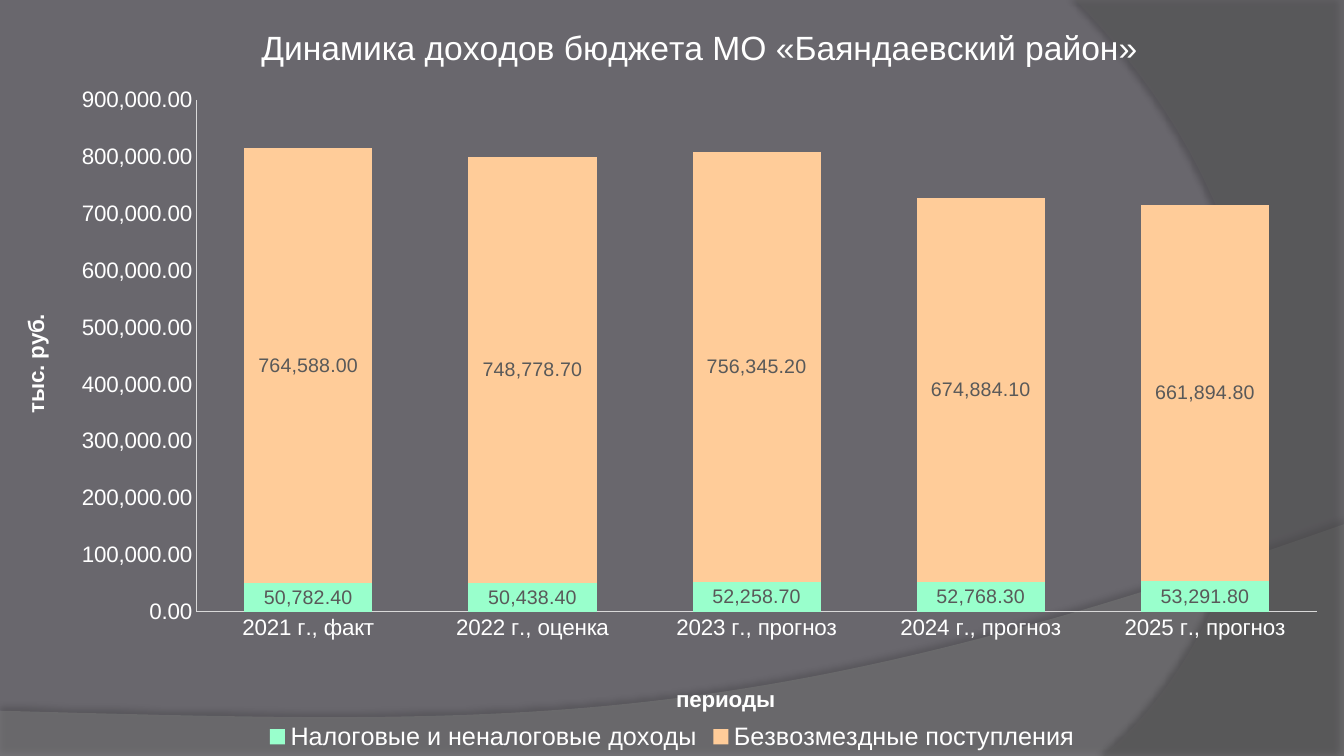
from lxml import etree
from pptx import Presentation
from pptx.chart.data import CategoryChartData
from pptx.dml.color import RGBColor
from pptx.enum.chart import XL_CHART_TYPE, XL_LEGEND_POSITION, XL_TICK_MARK
from pptx.oxml import parse_xml
from pptx.oxml.ns import nsdecls, qn
from pptx.util import Cm, Pt

STACKED = XL_CHART_TYPE.COLUMN_STACKED
BOTTOM = XL_LEGEND_POSITION.BOTTOM
NO_TICK = XL_TICK_MARK.NONE

WIDTH, HEIGHT = 33.87, 19.05
FONT = "Arial"
NUMBER_FORMAT = "#,##0.00"
COLORS = {
    "background": "69676D", "wave": "7F7F7F", "side": "5E5E5E",
    "shadow": "000000", "text": "FFFFFF", "label": "595959",
    "axis": "D9D9D9", "tax": "99FFCC", "grants": "FFCC99",
}
PERIODS = ["2021 г., факт", "2022 г., оценка", "2023 г., прогноз",
           "2024 г., прогноз", "2025 г., прогноз"]
SERIES = [
    ("Налоговые и неналоговые доходы", "tax",
     [50782.4, 50438.4, 52258.7, 52768.3, 53291.8]),
    ("Безвозмездные поступления", "grants",
     [764588, 748778.7, 756345.2, 674884.1, 661894.8]),
]


def rgb(name):
    return RGBColor.from_string(COLORS[name])


def fill_solid(fill, color):
    fill.solid()
    fill.fore_color.rgb = rgb(color)


def set_font(font, size, color="text", bold=False):
    for key, value in {"name": FONT, "size": Pt(size), "bold": bold}.items():
        setattr(font, key, value)
    font.color.rgb = rgb(color)


def bezier(p0, p1, p2, p3, steps=60):
    points = []
    for i in range(steps + 1):
        t = i / steps
        u = 1 - t
        points.append(tuple(
            u**3 * a + 3 * u * u * t * b + 3 * u * t * t * c + t**3 * d
            for a, b, c, d in zip(p0, p1, p2, p3)))
    return points


def add_swoosh(s, points, color, opacity, shadow_opacity, distance, angle):
    (x, y), *rest = [(Cm(a), Cm(b)) for a, b in points]
    builder = s.shapes.build_freeform(x, y)
    builder.add_line_segments(rest, close=True)
    sp = builder.convert_to_shape()
    sp.shadow.inherit = False
    sp.line.fill.background()
    fill_solid(sp.fill, color)
    spPr = sp._element.spPr
    clr = spPr.find(qn("a:solidFill"))[0]
    etree.SubElement(clr, qn("a:alpha"), val=str(opacity * 1000))
    effects = spPr.find(qn("a:effectLst"))
    shadow = etree.SubElement(
        effects, qn("a:outerShdw"), blurRad=str(Pt(4)), dist=str(Pt(distance)),
        dir=str(angle * 60000), algn="ctr", rotWithShape="0")
    clr = etree.SubElement(shadow, qn("a:srgbClr"), val=COLORS["shadow"])
    etree.SubElement(clr, qn("a:alpha"), val=str(shadow_opacity * 1000))


def place(element, index, **values):
    for old in element.findall(qn("c:layout")):
        element.remove(old)
    modes = {"xMode": "edge", "yMode": "edge"}
    if "w" in values:
        modes = {"layoutTarget": "inner", **modes}
    layout = parse_xml(f"<c:layout {nsdecls('c')}><c:manualLayout/></c:layout>")
    for key, value in {**modes, **values}.items():
        etree.SubElement(layout[0], qn(f"c:{key}"), val=str(value))
    element.insert(index, layout)


def add_title(title, text, size, bold, **position):
    tf = title.text_frame
    tf.text = text
    set_font(tf.paragraphs[0].runs[0].font, size, bold=bold)
    if position:
        place(title._element, 1, **position)


def format_axis(axis, title, **position):
    axis.has_major_gridlines = False
    axis.major_tick_mark = axis.minor_tick_mark = NO_TICK
    axis.format.line.color.rgb = rgb("axis")
    axis.format.line.width = Pt(0.75)
    set_font(axis.tick_labels.font, 16)
    add_title(axis.axis_title, title, 16, True, **position)


def format_series(series, color):
    fill_solid(series.format.fill, color)
    series.format.line.fill.background()
    labels = series.data_labels
    for key, value in {"show_value": True, "number_format": NUMBER_FORMAT,
                       "number_format_is_linked": False}.items():
        setattr(labels, key, value)
    set_font(labels.font, 14, "label")


def add_income_chart(s):
    data = CategoryChartData(number_format=NUMBER_FORMAT)
    data.categories = PERIODS
    for name, _, values in SERIES:
        data.add_series(name, values)
    chart = s.shapes.add_chart(
        STACKED, 0, Cm(0.13), Cm(WIDTH), Cm(HEIGHT - 0.13), data).chart
    set_font(chart.font, 12)
    add_title(chart.chart_title, "Динамика доходов бюджета МО «Баяндаевский район»",
              24, False, x=0.19, y=0.02)
    chart.chart_title.include_in_layout = False

    plot = chart.plots[0]
    plot.gap_width, plot.overlap, plot.vary_by_categories = 75, 100, False
    for series, (_, color, _) in zip(plot.series, SERIES):
        format_series(series, color)

    format_axis(chart.category_axis, "периоды", x=0.5, y=0.9)
    format_axis(chart.value_axis, "тыс. руб.")
    axis = chart.value_axis
    axis.minimum_scale, axis.maximum_scale, axis.major_unit = 0, 900000, 100000
    axis.tick_labels.number_format = NUMBER_FORMAT
    axis.tick_labels.number_format_is_linked = False

    chart.has_legend = True
    chart.legend.position = BOTTOM
    chart.legend.include_in_layout = False
    set_font(chart.legend.font, 18)
    plot_area = chart._chartSpace.find(".//" + qn("c:plotArea"))
    place(plot_area, 0, x=0.146, y=0.126, w=0.834, h=0.682)


def main():
    prs = Presentation()
    prs.slide_width, prs.slide_height = Cm(WIDTH), Cm(HEIGHT)
    s = prs.slides.add_slide(prs.slide_layouts[6])
    fill_solid(s.background.fill, "background")

    wave = bezier((WIDTH, 13.21), (18.92, 18.52), (13.23, 18.26), (0, 17.91))
    add_swoosh(s, [(0, HEIGHT), (WIDTH, HEIGHT)] + wave, "wave", 45, 35, 3.5, 270)
    side = bezier((27.81, HEIGHT), (31.65, 15.72), (34.47, 7.62), (27.1, 0))
    add_swoosh(s, [(WIDTH, 0), (WIDTH, HEIGHT)] + side, "side", 40, 45, 4, 180)

    add_income_chart(s)
    prs.save("out.pptx")


if __name__ == "__main__":
    main()
